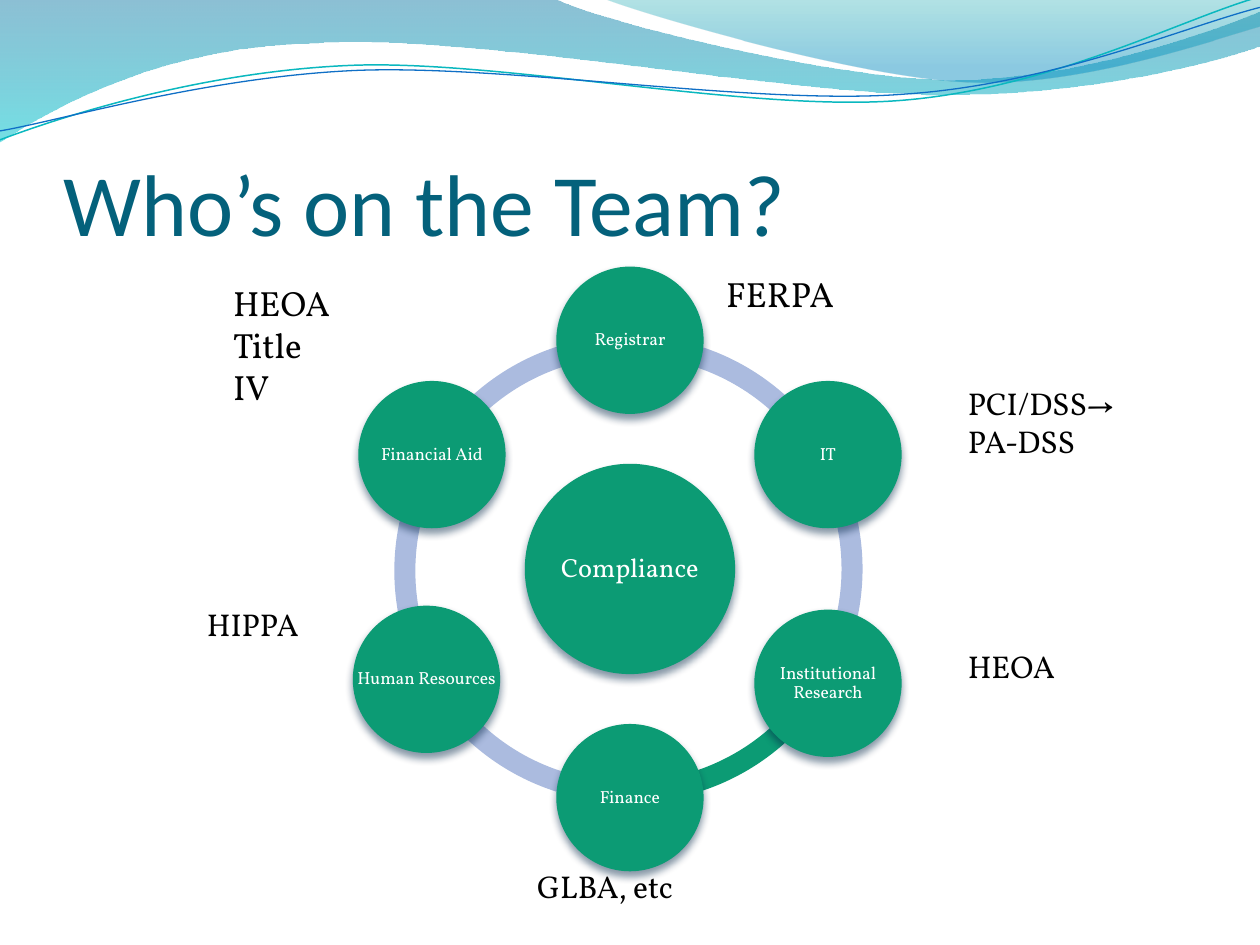
import math

import pptx
import pptx.dml.color
import pptx.enum.shapes
import pptx.enum.text
import pptx.oxml
import pptx.oxml.ns
import pptx.util

Cm = pptx.util.Cm
Pt = pptx.util.Pt
RGBColor = pptx.dml.color.RGBColor
MSO_SHAPE = pptx.enum.shapes.MSO_SHAPE
MSO_ANCHOR = pptx.enum.text.MSO_ANCHOR
PP_ALIGN = pptx.enum.text.PP_ALIGN
qn = pptx.oxml.ns.qn

WHITE = RGBColor(0xFF, 0xFF, 0xFF)
BLACK = RGBColor(0x00, 0x00, 0x00)
TITLE_BLUE = RGBColor(0x04, 0x61, 0x7B)
GREEN = RGBColor(0x0C, 0x9B, 0x74)
LAVENDER = RGBColor(0xAB, 0xBB, 0xDF)
TEAL_LINE = RGBColor(0x0A, 0xB8, 0xBF)
BLUE_LINE = RGBColor(0x0F, 0x6F, 0xC6)
WAVE_BLUE = RGBColor(0x00, 0x74, 0xA1)
WAVE_CYAN = RGBColor(0x00, 0xC6, 0xCF)
WAVE_TEAL = RGBColor(0x00, 0xA1, 0xA9)
WAVE_SKY = RGBColor(0x00, 0x8B, 0xBF)
SHADOW = RGBColor(0x04, 0x27, 0x47)
NS = pptx.oxml.ns.nsdecls("a")

prs = pptx.Presentation()
prs.slide_width, prs.slide_height = Cm(25.4), Cm(19.05)
s = prs.slides.add_slide(prs.slide_layouts[6])


def add_wave(start, segments, closed):
    """Draw a path in cm; a segment is a line end (2 numbers) or a Bezier curve (6)."""
    builder = s.shapes.build_freeform(Cm(start[0]), Cm(start[1]), scale=1.0)
    builder.add_line_segments([(Cm(seg[-2]), Cm(seg[-1])) for seg in segments], close=closed)
    sp = builder.convert_to_shape()
    sp.shadow.inherit = False
    lines = list(sp.element.iter(qn("a:lnTo")))
    for line, seg in zip(lines, segments):
        if len(seg) == 6:
            pts = "".join(f'<a:pt x="{Cm(x) - sp.left}" y="{Cm(y) - sp.top}"/>'
                          for x, y in zip(seg[::2], seg[1::2]))
            line.getparent().replace(line, pptx.oxml.parse_xml(
                f'<a:cubicBezTo {NS}>{pts}</a:cubicBezTo>'))
    return sp


def add_text(tf, lines, font, size, color, align=PP_ALIGN.LEFT):
    for i, line in enumerate(lines):
        p = tf.paragraphs[0] if i == 0 else tf.add_paragraph()
        p.alignment = align
        r = p.add_run()
        r.text = line
        r.font.name, r.font.size, r.font.color.rgb = font, Pt(size), color


# Header waves: start, segments, gradient stops (position, colour, opacity)
waves = [
    ((0, 0), [(11.18, -0.03), (12.09, 0.43, 16.87, 1.6, 19.25, 1.6),
              (21.67, 1.6, 24.33, 0.66, 25.4, 0.23), (25.43, 0.91),
              (24.97, 1.12, 22.1, 1.93, 18.95, 1.91),
              (15.8, 1.9, 9.7, 0.71, 6.53, 0.86),
              (3.28, 0.91, 1.17, 2.11, -0.03, 2.87)],
     [(0, WAVE_BLUE, 45), (100, WAVE_CYAN, 55)]),
    ((12.17, -0.03), [(12.93, 0.28, 17.32, 1.57, 19.53, 1.65),
                      (21.74, 1.75, 24.41, 0.81, 25.4, 0.53), (25.4, 0)],
     [(0, WAVE_TEAL, 30), (80, WAVE_SKY, 45)]),
]
for start, segments, stops in waves:
    sp = add_wave(start, segments, True)
    sp.line.fill.background()
    sp.fill.background()
    stop_xml = "".join(
        f'<a:gs pos="{pos * 1000}"><a:srgbClr val="{color}">'
        f'<a:alpha val="{opacity * 1000}"/></a:srgbClr></a:gs>'
        for pos, color, opacity in stops)
    no_fill = sp.element.spPr.find(qn("a:noFill"))
    no_fill.getparent().replace(no_fill, pptx.oxml.parse_xml(
        f'<a:gradFill {NS}><a:gsLst>{stop_xml}</a:gsLst>'
        f'<a:lin ang="5400000" scaled="0"/></a:gradFill>'))

strands = [
    ((0, 2.82), [(1.22, 2.36, 4.01, 1.45, 7.04, 1.32),
                 (10.03, 1.19, 15.06, 2.26, 18.11, 2.03),
                 (21.16, 1.8, 23.83, 0.38, 25.35, -0.05)], TEAL_LINE, 0.85),
    ((0, 2.64), [(1.19, 2.44, 4.17, 1.55, 7.19, 1.42),
                 (10.24, 1.3, 15.24, 2.13, 18.21, 1.9),
                 (21.23, 1.7, 23.9, 0.53, 25.4, 0.15)], BLUE_LINE, 0.75),
]
for start, segments, color, width in strands:
    sp = add_wave(start, segments, False)
    sp.fill.background()
    sp.line.color.rgb, sp.line.width = color, Pt(width)

# Title
tf = s.shapes.add_textbox(Cm(1.28), Cm(1.95), Cm(22.86), Cm(3.18)).text_frame
tf.word_wrap = True
tf.vertical_anchor = MSO_ANCHOR.BOTTOM
tf.margin_left = tf.margin_right = tf.margin_bottom = 0
add_text(tf, ["Who’s on the Team?"], "Calibri", 50, TITLE_BLUE)

# Ring: left, top, start and end angle in degrees, colour
arcs = [
    (7.97, 6.76, 210, 270, LAVENDER),
    (7.95, 6.8, 151.98, 210.85, LAVENDER),
    (7.93, 6.76, 89.17, 151.15, LAVENDER),
    (7.97, 6.76, 30, 90, GREEN),
    (7.97, 6.76, 330, 30, LAVENDER),
    (7.97, 6.76, 270, 330, LAVENDER),
]
for left, top, begin, end, color in arcs:
    sp = s.shapes.add_shape(MSO_SHAPE.BLOCK_ARC, Cm(left), Cm(top), Cm(9.42), Cm(9.42))
    sp.shadow.inherit = False
    # Angles are stored in 1/60000 degree, adjustments in 1/100000
    sp.adjustments[0], sp.adjustments[1], sp.adjustments[2] = begin * 0.6, end * 0.6, 0.045
    sp.fill.solid()
    sp.fill.fore_color.rgb = color
    sp.line.fill.background()

# Circles: the hub, then the team clockwise from the top
CENTER_X, CENTER_Y, RADIUS = 12.7, 11.47, 4.61
team = ["Registrar", "IT", "Institutional Research", "Finance",
        "Human Resources", "Financial Aid"]
circles = [("Compliance", CENTER_X, CENTER_Y, 4.24, 15)]
for i, name in enumerate(team):
    angle = math.radians(60 * i - 90)
    dx, dy = (-0.11, -0.08) if name == "Human Resources" else (0, 0)
    circles.append((name, CENTER_X + RADIUS * math.cos(angle) + dx,
                    CENTER_Y + RADIUS * math.sin(angle) + dy, 2.97, 10))
for name, x, y, size, font_size in circles:
    sp = s.shapes.add_shape(MSO_SHAPE.OVAL, Cm(x - size / 2), Cm(y - size / 2),
                            Cm(size), Cm(size))
    sp.fill.solid()
    sp.fill.fore_color.rgb = GREEN
    sp.line.fill.background()
    sp.shadow.inherit = False
    effects = sp.element.spPr.find(qn("a:effectLst"))
    effects.append(pptx.oxml.parse_xml(
        f'<a:outerShdw {NS} blurRad="{Pt(4.5)}" dist="{Pt(3)}" dir="5400000" rotWithShape="0">'
        f'<a:srgbClr val="{SHADOW}"><a:alpha val="48000"/></a:srgbClr></a:outerShdw>'))
    tf = sp.text_frame
    tf.word_wrap = name == "Institutional Research"
    tf.vertical_anchor = MSO_ANCHOR.MIDDLE
    tf.margin_left = tf.margin_right = tf.margin_top = tf.margin_bottom = Cm(0.03)
    add_text(tf, [name], "Vollkorn", font_size, WHITE, PP_ALIGN.CENTER)
    tf.paragraphs[0].line_spacing = 0.9

# Regulations beside the circles
labels = [
    (["HEOA Title IV"], 4.45, 5.55, 2.74, 1.96, 20),
    (["FERPA"], 14.39, 5.37, 3.61, 1.12, 20),
    (["PCI/DSS→", "PA-DSS"], 19.26, 7.62, 3.81, 1.8, 18),
    (["HEOA"], 19.26, 12.91, 3.18, 1.02, 18),
    (["HIPPA"], 3.92, 12.07, 2.64, 1.02, 18),
    (["GLBA, etc"], 10.58, 17.35, 4.24, 1.02, 18),
]
for lines, left, top, width, height, size in labels:
    tf = s.shapes.add_textbox(Cm(left), Cm(top), Cm(width), Cm(height)).text_frame
    tf.word_wrap = True
    tf.auto_size = pptx.enum.text.MSO_AUTO_SIZE.SHAPE_TO_FIT_TEXT
    add_text(tf, lines, "Vollkorn", size, BLACK)

prs.save("out.pptx")
